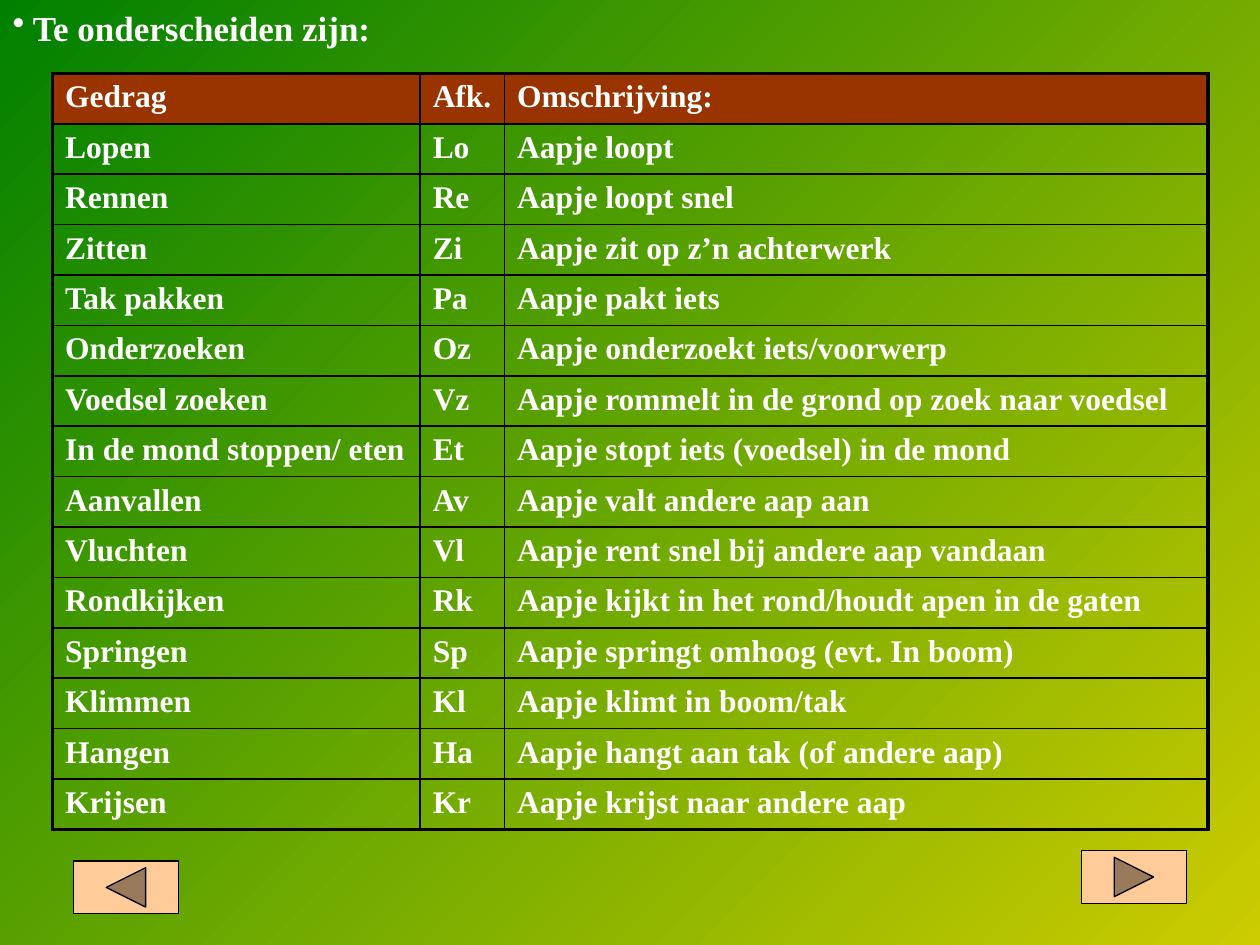
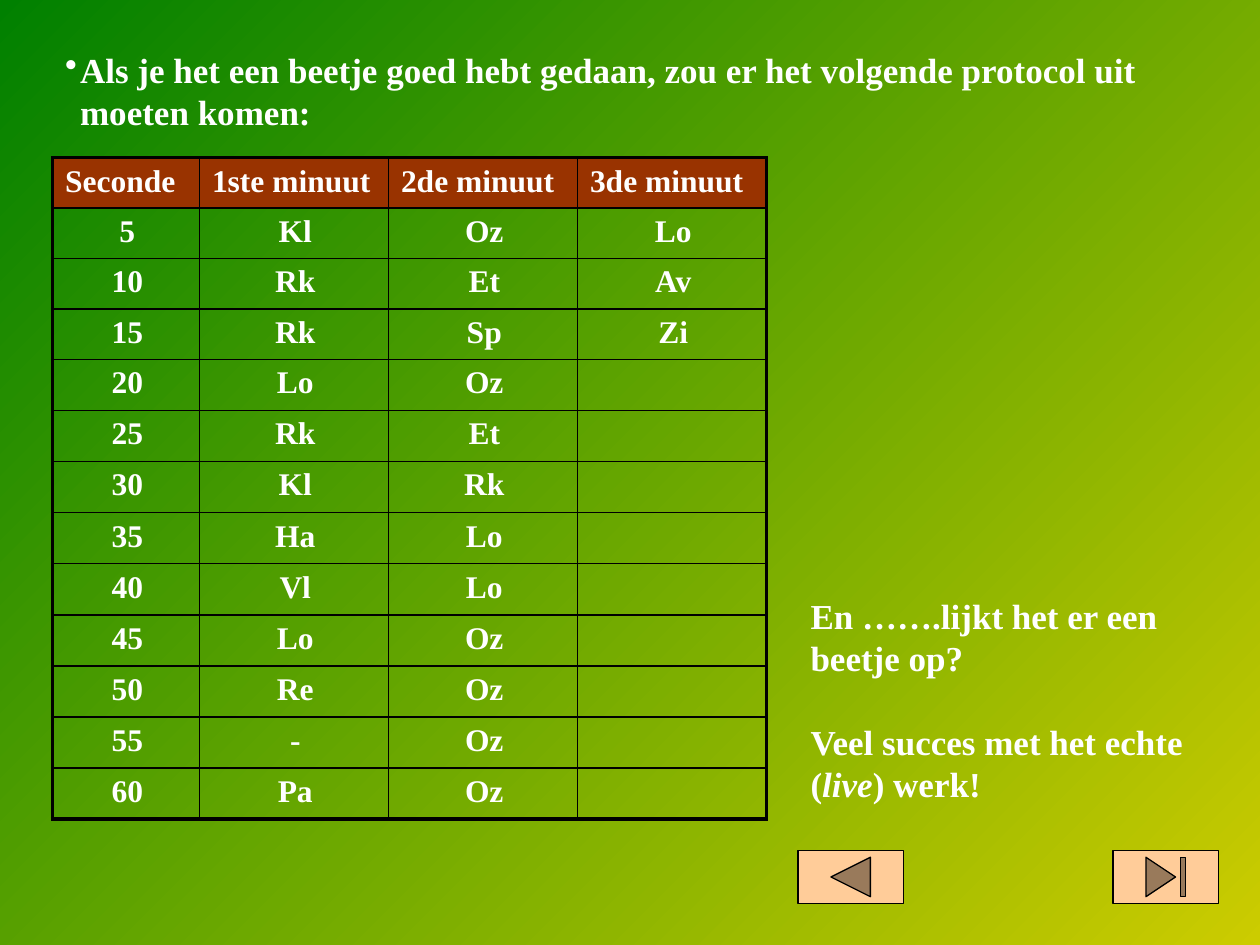
from pptx import Presentation
from pptx.dml.color import RGBColor
from pptx.enum.shapes import MSO_SHAPE as Preset
from pptx.enum.text import MSO_ANCHOR as Anchor, MSO_AUTO_SIZE as AutoSize, PP_ALIGN as Align
from pptx.oxml.ns import qn
from pptx.util import Cm, Pt
from lxml.etree import SubElement

GREEN = RGBColor(0x00, 0x80, 0x00)
YELLOW = RGBColor(0xCC, 0xCC, 0x00)
BROWN = RGBColor(0x99, 0x33, 0x00)
PEACH = RGBColor(0xFF, 0xCC, 0x99)
WHITE = RGBColor(0xFF, 0xFF, 0xFF)
BLACK = RGBColor(0x00, 0x00, 0x00)

FONT = "Times New Roman"
TEXT_SIZE, CELL_SIZE = 20, 18
OUTER_LINE, INNER_LINE = Pt(2.25), Pt(1)
TABLE_LEFT, ROW_HEIGHT = 1.06, 1.016

BEHAVIOURS = [
    ("Gedrag", "Afk.", "Omschrijving:"),
    ("Lopen", "Lo", "Aapje loopt"),
    ("Rennen", "Re", "Aapje loopt snel"),
    ("Zitten", "Zi", "Aapje zit op z’n achterwerk"),
    ("Tak pakken", "Pa", "Aapje pakt iets"),
    ("Onderzoeken", "Oz", "Aapje onderzoekt iets/voorwerp"),
    ("Voedsel zoeken", "Vz", "Aapje rommelt in de grond op zoek naar voedsel"),
    ("In de mond stoppen/ eten", "Et", "Aapje stopt iets (voedsel) in de mond"),
    ("Aanvallen", "Av", "Aapje valt andere aap aan"),
    ("Vluchten", "Vl", "Aapje rent snel bij andere aap vandaan"),
    ("Rondkijken", "Rk", "Aapje kijkt in het rond/houdt apen in de gaten"),
    ("Springen", "Sp", "Aapje springt omhoog (evt. In boom)"),
    ("Klimmen", "Kl", "Aapje klimt in boom/tak"),
    ("Hangen", "Ha", "Aapje hangt aan tak (of andere aap)"),
    ("Krijsen", "Kr", "Aapje krijst naar andere aap"),
]

PROTOCOL_HEADER = ("Seconde", "1ste minuut", "2de minuut", "3de minuut")
MINUTES = [
    "Kl Rk Rk Lo Rk Kl Ha Vl Lo Re - Pa".split(),
    "Oz Et Sp Oz Et Rk Lo Lo Oz Oz Oz Oz".split(),
    ["Lo", "Av", "Zi"] + [""] * 9,
]


def paint_background(deck):
    fill = deck.slide_master.background.fill
    fill.gradient()
    fill.gradient_angle = 315
    for stop, colour in zip(fill.gradient_stops, (GREEN, YELLOW)):
        stop.color.rgb = colour


def add_span(para, text, size=TEXT_SIZE, italic=False):
    span = para.add_run()
    span.text = text
    span.font.name = FONT
    span.font.size = Pt(size)
    span.font.bold = True
    span.font.italic = italic
    span.font.color.rgb = WHITE


def add_bullet(para, hang):
    properties = para._p.get_or_add_pPr()
    properties.set("marL", str(Cm(hang)))
    properties.set("indent", str(-Cm(hang)))
    SubElement(properties, qn("a:buChar")).set("char", "•")


def add_titled_page(deck, lines, left, top, width, height, hang):
    page = deck.slides.add_slide(deck.slide_layouts[5])
    title = page.shapes.title
    title.left, title.top, title.width, title.height = map(Cm, (left, top, width, height))
    frame = title.text_frame
    frame.auto_size = AutoSize.NONE
    frame.word_wrap = True
    frame.vertical_anchor = Anchor.TOP
    para = frame.paragraphs[0]
    para.alignment = Align.LEFT
    add_bullet(para, hang)
    for index, line in enumerate(lines):
        if index:
            para.add_line_break()
        add_span(para, line)
    return page


def add_text(page, paragraphs, left, top, width, height, gap):
    box = page.shapes.add_textbox(Cm(left), Cm(top), Cm(width), Cm(height))
    frame = box.text_frame
    frame.word_wrap = True
    for index, spans in enumerate(paragraphs):
        para = frame.add_paragraph() if index else frame.paragraphs[0]
        if index:
            para.space_before = Pt(gap)
        for text, italic in spans:
            add_span(para, text, italic=italic)


def set_borders(cell, outer_sides):
    properties = cell._tc.get_or_add_tcPr()
    for side in "LRTB":
        width = OUTER_LINE if side in outer_sides else INNER_LINE
        line = SubElement(properties, qn(f"a:ln{side}"), w=str(width))
        colour = SubElement(SubElement(line, qn("a:solidFill")), qn("a:srgbClr"))
        colour.set("val", str(BLACK))


def add_grid(page, rows, top, widths, body_alignment):
    frame = page.shapes.add_table(len(rows), len(widths), Cm(TABLE_LEFT), Cm(top),
                                  Cm(sum(widths)), Cm(ROW_HEIGHT * len(rows)))
    table = frame.table
    table.horz_banding = False
    for column, width in zip(table.columns, widths):
        column.width = Cm(width)
    last_row, last_column = len(rows) - 1, len(widths) - 1
    for r, row in enumerate(rows):
        for c, text in enumerate(row):
            cell = table.cell(r, c)
            cell.margin_right = Cm(0.2)
            edges = {"L": c == 0, "R": c == last_column, "T": r == 0, "B": r == last_row}
            set_borders(cell, [side for side, outer in edges.items() if outer])
            if r == 0:
                cell.fill.solid()
                cell.fill.fore_color.rgb = BROWN
            else:
                cell.fill.background()
            para = cell.text_frame.paragraphs[0]
            para.alignment = body_alignment if r else Align.LEFT
            if text:
                add_span(para, text, CELL_SIZE)


def add_button(page, preset, left, top):
    button = page.shapes.add_shape(preset, Cm(left), Cm(top), Cm(2.12), Cm(1.06))
    button.shadow.inherit = False
    button.fill.solid()
    button.fill.fore_color.rgb = PEACH
    button.line.color.rgb = BLACK
    button.line.width = Pt(0.75)


def build_behaviour_page(deck):
    page = add_titled_page(deck, ["Te onderscheiden zijn:"], 0, 0, 12.07, 1.1, 0.41)
    add_grid(page, BEHAVIOURS, 1.48, [7.41, 1.7, 14.18], Align.LEFT)
    add_button(page, Preset.ACTION_BUTTON_BACK_OR_PREVIOUS, 1.48, 17.36)
    add_button(page, Preset.ACTION_BUTTON_FORWARD_OR_NEXT, 21.8, 17.15)


def build_protocol_page(deck):
    lines = ["Als je het een beetje goed hebt gedaan, zou er het volgende protocol uit",
             "moeten komen:"]
    page = add_titled_page(deck, lines, 1.06, 0.85, 24.34, 1.96, 0.3)
    seconds = [str(second) for second in range(5, 61, 5)]
    rows = [PROTOCOL_HEADER, *zip(seconds, *MINUTES)]
    add_grid(page, rows, 3.18, [2.96, 3.81, 3.81, 3.81], Align.CENTER)
    closing = [
        [("En …….lijkt het er een beetje op?", False)],
        [("Veel succes met het echte (", False), ("live", True), (") werk!", False)],
    ]
    add_text(page, closing, 16.09, 11.85, 8.68, 4.49, 24)
    add_button(page, Preset.ACTION_BUTTON_BACK_OR_PREVIOUS, 16.09, 17.15)
    add_button(page, Preset.ACTION_BUTTON_END, 22.44, 17.15)


def main():
    deck = Presentation()
    deck.slide_width, deck.slide_height = Cm(25.4), Cm(19.05)
    paint_background(deck)
    build_behaviour_page(deck)
    build_protocol_page(deck)
    deck.save("out.pptx")


if __name__ == "__main__":
    main()
